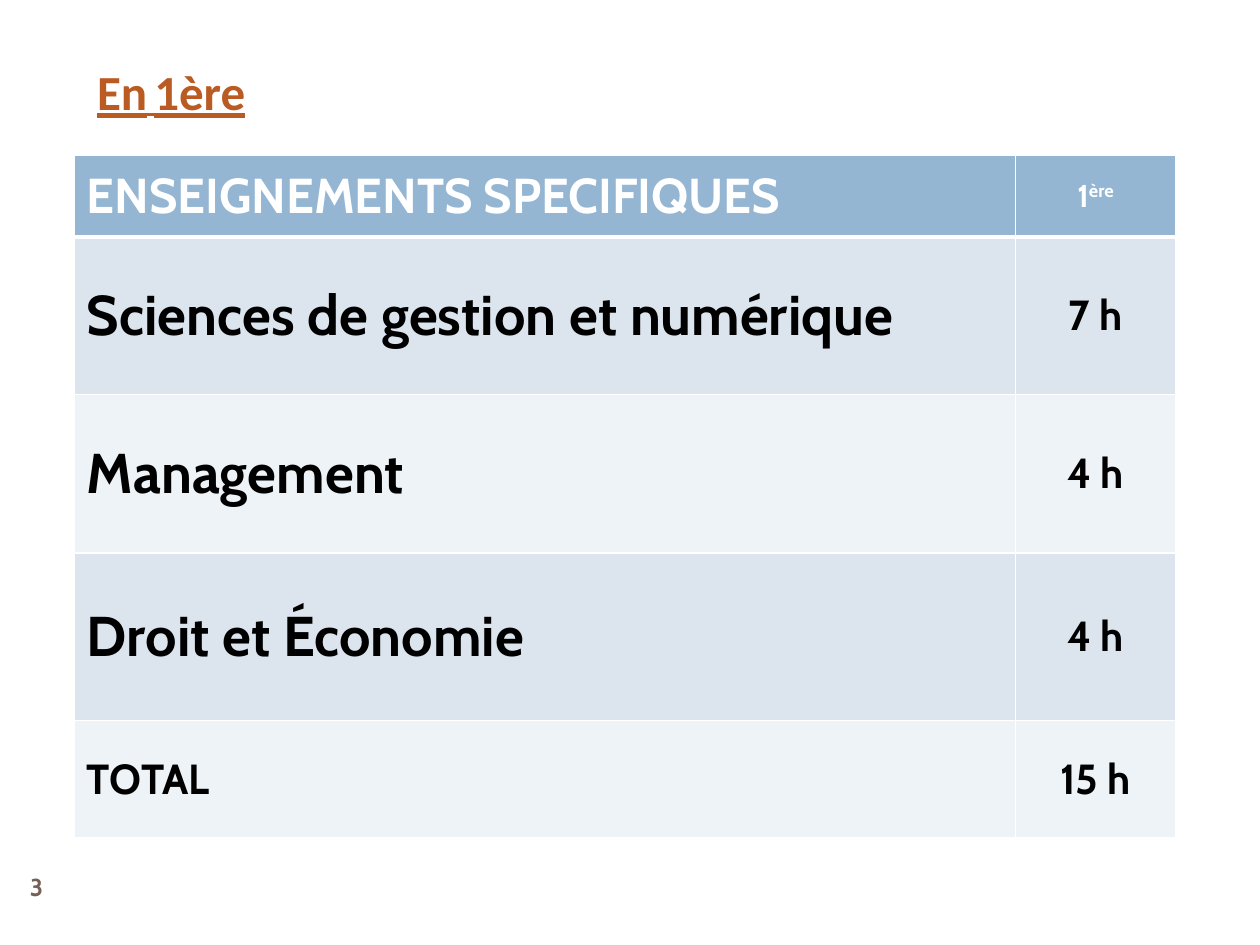
"""Builds a slide with the weekly hours of the specific subjects taught in 1ère."""
from dataclasses import dataclass

from lxml.etree import SubElement
from pptx import Presentation
from pptx.dml.color import RGBColor
from pptx.enum.text import MSO_ANCHOR, MSO_AUTO_SIZE, PP_ALIGN
from pptx.oxml.ns import qn
from pptx.util import Inches, Pt

COLOURS = {
    "header": "94B6D2",
    "band_dark": "DCE5EE",
    "band_light": "EEF3F7",
    "white": "FFFFFF",
    "black": "000000",
    "title": "B95B22",
    "number": "775F55",
}
COLUMN_WIDTHS = (7.47, 1.27)
TABLE_LEFT, TABLE_TOP = 0.59, 1.23


@dataclass(frozen=True)
class SubjectRow:
    subject: str
    hours: str
    height: float
    subject_size: int = 32
    hours_size: int = 24
    superscript: str = ""


ROWS = (
    SubjectRow("ENSEIGNEMENTS SPECIFIQUES", "1", 0.65, 28, 18, "ère"),
    SubjectRow("Sciences de gestion et numérique", "7 h", 1.25),
    SubjectRow("Management", "4 h", 1.26),
    SubjectRow("Droit et Économie", "4 h", 1.33),
    SubjectRow("TOTAL", "15 h", 0.93, 24),
)


def add_text(paragraph, text: str, *, size: int, colour: str, font: str = "Cabin",
             underline: bool = False, superscript: bool = False) -> None:
    """Append a bold run with the given format to a paragraph."""
    run = paragraph.add_run()
    run.text = text
    run.font.name = font
    run.font.size = Pt(size)
    run.font.bold = True
    run.font.underline = underline
    run.font.color.rgb = RGBColor.from_string(COLOURS[colour])
    if superscript:
        run._r.get_or_add_rPr().set("baseline", "30000")


def place(shape, left: float, top: float, width: float, height: float) -> None:
    """Position a shape in inches."""
    shape.left, shape.top = Inches(left), Inches(top)
    shape.width, shape.height = Inches(width), Inches(height)


def set_borders(cell, widths: dict[str, int]) -> None:
    """Give a cell white borders whose widths are in points."""
    properties = cell._tc.get_or_add_tcPr()
    for side, width in widths.items():
        line = SubElement(properties, qn(f"a:{side}"), w=str(Pt(width)))
        fill = SubElement(line, qn("a:solidFill"))
        SubElement(fill, qn("a:srgbClr"), val=COLOURS["white"])


def format_cell(cell, fill: str, top: int, bottom: int) -> None:
    """Set the borders, fill and vertical anchor of a cell."""
    set_borders(cell, {"lnL": 1, "lnR": 1, "lnT": top, "lnB": bottom})
    cell.fill.solid()
    cell.fill.fore_color.rgb = RGBColor.from_string(COLOURS[fill])
    cell.vertical_anchor = MSO_ANCHOR.MIDDLE


def add_hours_table(slide, rows: tuple[SubjectRow, ...]) -> None:
    """Draw the table of subjects and hours."""
    table = slide.shapes.add_table(
        len(rows), len(COLUMN_WIDTHS), Inches(TABLE_LEFT), Inches(TABLE_TOP),
        Inches(sum(COLUMN_WIDTHS)), Inches(sum(row.height for row in rows))).table
    for column, width in zip(table.columns, COLUMN_WIDTHS):
        column.width = Inches(width)
    for index, row in enumerate(rows):
        table.rows[index].height = Inches(row.height)
        band = "band_dark" if index % 2 else "band_light"
        fill, colour = ("header", "white") if index == 0 else (band, "black")
        subject, hours = table.cell(index, 0), table.cell(index, 1)
        for cell in (subject, hours):
            format_cell(cell, fill, top=3 if index == 1 else 1, bottom=3 if index == 0 else 1)
        add_text(subject.text_frame.paragraphs[0], row.subject,
                 size=row.subject_size, colour=colour)
        paragraph = hours.text_frame.paragraphs[0]
        paragraph.alignment = PP_ALIGN.CENTER
        add_text(paragraph, row.hours, size=row.hours_size, colour=colour)
        if row.superscript:
            add_text(paragraph, row.superscript, size=row.hours_size,
                     colour=colour, superscript=True)


def add_title(slide) -> None:
    """Move and fill the title placeholder."""
    title = slide.shapes.title
    place(title, 0.67, 0.44, 1.5, 0.57)
    frame = title.text_frame
    frame.auto_size = MSO_AUTO_SIZE.NONE
    frame.word_wrap = True
    frame.vertical_anchor = MSO_ANCHOR.TOP
    paragraph = frame.paragraphs[0]
    paragraph.alignment = PP_ALIGN.LEFT
    for text, size in (("En", 28), (" ", 18), ("1ère", 28)):
        add_text(paragraph, text, size=size, colour="title", font="Calibri", underline=True)


def add_slide_number(slide, number: str) -> None:
    """Write the slide number in the lower left corner."""
    box = slide.shapes.add_textbox(0, Inches(6.83), Inches(0.58), Inches(0.42))
    box.text_frame.word_wrap = True
    box.text_frame.vertical_anchor = MSO_ANCHOR.MIDDLE
    paragraph = box.text_frame.paragraphs[0]
    paragraph.alignment = PP_ALIGN.CENTER
    add_text(paragraph, number, size=14, colour="number")


def main() -> None:
    """Build and save the presentation."""
    presentation = Presentation()
    presentation.slide_width, presentation.slide_height = Inches(10), Inches(7.5)
    slide = presentation.slides.add_slide(presentation.slide_layouts.get_by_name("Title Only"))
    add_hours_table(slide, ROWS)
    add_title(slide)
    add_slide_number(slide, "3")
    presentation.save("out.pptx")


if __name__ == "__main__":
    main()
